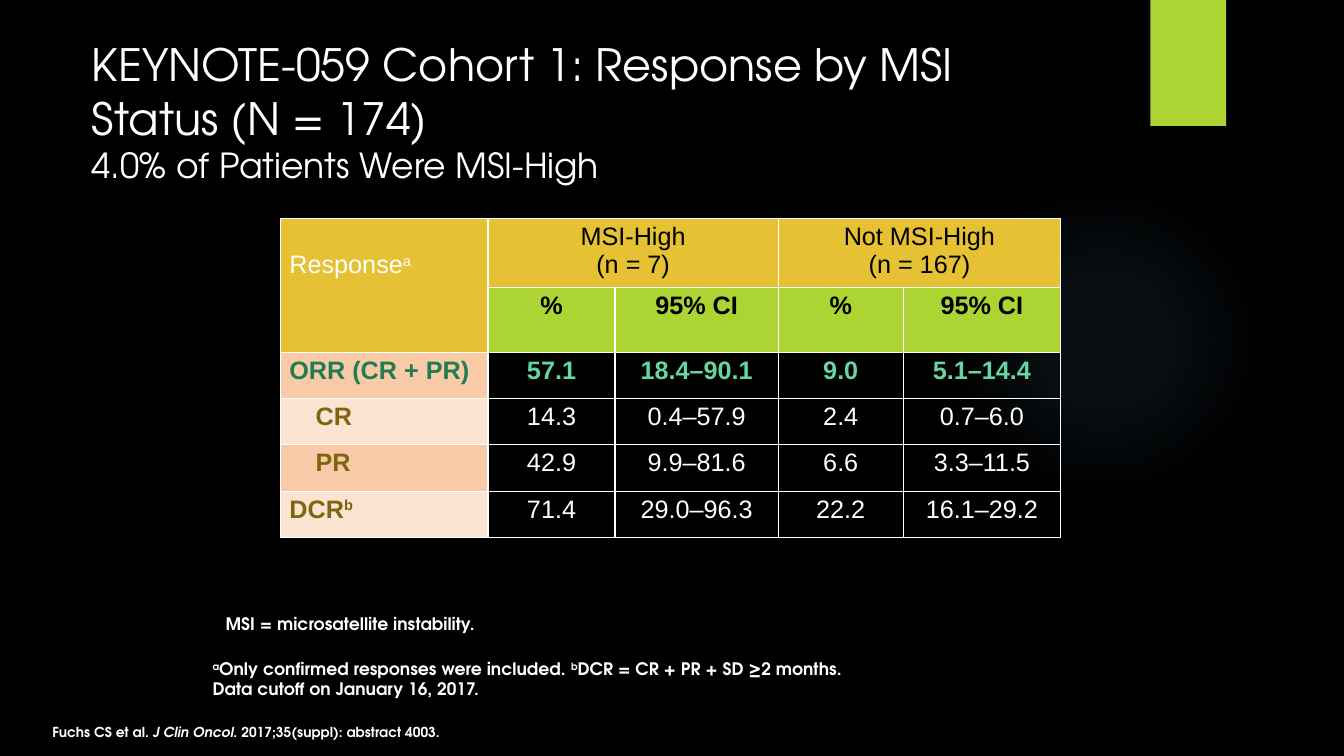
import dataclasses
import typing

import lxml.etree
import pptx
import pptx.dml.color
import pptx.enum.shapes
import pptx.enum.text
import pptx.oxml
import pptx.oxml.ns
import pptx.slide
import pptx.table
import pptx.text.text
import pptx.util

SLIDE_WIDTH = pptx.util.Inches(13.33)
SLIDE_HEIGHT = pptx.util.Inches(7.5)
DISPLAY_FONT = "TeX Gyre Adventor"
TABLE_FONT = "Arial"
WHITE, BLACK = "FFFFFF", "000000"
GOLD, LIME = "E6C133", "ACD433"
PEACH, PALE_PEACH = "F9CAA7", "FCE4D3"
GREEN, MINT, OLIVE = "217C51", "65D6A0", "7D660F"
CENTER = pptx.enum.text.PP_ALIGN.CENTER
LEFT = pptx.enum.text.PP_ALIGN.LEFT


@dataclasses.dataclass(frozen=True)
class Box:
    left: float
    top: float
    width: float
    height: float

    def place(self) -> tuple[int, int, int, int]:
        return (across(self.left), down(self.top), across(self.width), down(self.height))


@dataclasses.dataclass(frozen=True)
class Span:
    text: str
    size: float = 18
    color: str = WHITE
    bold: bool = False
    italic: bool = False
    raised: bool = False
    font: str = TABLE_FONT


@dataclasses.dataclass(frozen=True)
class ResponseRow:
    label: list[Span]
    values: tuple[str, ...]
    label_fill: str
    value_color: str = WHITE
    bold: bool = False
    indent: float = 0


def across(percent: float) -> int:
    return round(SLIDE_WIDTH * percent / 100)


def down(percent: float) -> int:
    return round(SLIDE_HEIGHT * percent / 100)


def rgb(color: str) -> pptx.dml.color.RGBColor:
    return pptx.dml.color.RGBColor.from_string(color)


def note(text: str, size: float = 12.3, italic: bool = False, raised: bool = False) -> Span:
    return Span(text, size, WHITE, True, italic, raised, DISPLAY_FONT)


def write(paragraph: pptx.text.text._Paragraph, spans: list[Span], align: typing.Any = LEFT) -> None:
    paragraph.alignment = align
    for span in spans:
        for number, line in enumerate(span.text.split("\n")):
            if number:
                paragraph.add_line_break()
            run = paragraph.add_run()
            run.text = line
            run.font.name = span.font
            run.font.size = pptx.util.Pt(span.size)
            run.font.bold = span.bold
            run.font.italic = span.italic
            run.font.color.rgb = rgb(span.color)
            if span.raised:
                run._r.get_or_add_rPr().set("baseline", "30000")


def draw_block(slide: pptx.slide.Slide, shape_type: typing.Any, box: Box, color: str) -> typing.Any:
    block = slide.shapes.add_shape(shape_type, *box.place())
    block.shadow.inherit = False
    block.fill.solid()
    block.fill.fore_color.rgb = rgb(color)
    block.line.fill.background()
    return block


def draw_glow(slide: pptx.slide.Slide, box: Box) -> None:
    glow = draw_block(slide, pptx.enum.shapes.MSO_SHAPE.OVAL, box, "7AC4F0")
    stops = "".join(
        f'<a:gs pos="{share * 1000}"><a:srgbClr val="7AC4F0"><a:alpha val="{alpha * 1000}"/></a:srgbClr></a:gs>'
        for share, alpha in ((0, 7), (36, 6), (69, 0), (100, 0))
    )
    gradient = pptx.oxml.parse_xml(
        f'<a:gradFill {pptx.oxml.ns.nsdecls("a")} rotWithShape="1"><a:gsLst>{stops}</a:gsLst>'
        '<a:path path="circle"><a:fillToRect l="50000" t="50000" r="50000" b="50000"/></a:path></a:gradFill>'
    )
    properties = glow._element.spPr
    properties.replace(properties.find(pptx.oxml.ns.qn("a:solidFill")), gradient)


def draw_note(slide: pptx.slide.Slide, box: Box, lines: list[list[Span]]) -> None:
    frame = slide.shapes.add_textbox(*box.place()).text_frame
    frame.word_wrap = True
    for number, spans in enumerate(lines):
        write(frame.add_paragraph() if number else frame.paragraphs[0], spans)


def fill_placeholder(holder: typing.Any, box: Box, spans: list[Span], anchor: typing.Any) -> None:
    holder.left, holder.top, holder.width, holder.height = box.place()
    frame = holder.text_frame
    frame.word_wrap = True
    frame.auto_size = pptx.enum.text.MSO_AUTO_SIZE.NONE
    frame.vertical_anchor = anchor
    paragraph = frame.paragraphs[0]
    properties = paragraph._p.get_or_add_pPr()
    properties.set("marL", "0")
    properties.set("indent", "0")
    lxml.etree.SubElement(properties, pptx.oxml.ns.qn("a:buNone"))
    paragraph.space_before = pptx.util.Pt(0)
    write(paragraph, spans)


def style_cell(cell: pptx.table._Cell, fill: str | None) -> None:
    properties = cell._tc.get_or_add_tcPr()
    for side in ("lnL", "lnR", "lnT", "lnB"):
        properties.append(pptx.oxml.parse_xml(
            f'<a:{side} {pptx.oxml.ns.nsdecls("a")} w="12700"><a:solidFill>'
            f'<a:srgbClr val="{WHITE}"/></a:solidFill></a:{side}>'
        ))
    if fill:
        cell.fill.solid()
        cell.fill.fore_color.rgb = rgb(fill)
    else:
        cell.fill.background()
    cell.margin_left = cell.margin_right = pptx.util.Inches(0.09)
    cell.margin_top = cell.margin_bottom = pptx.util.Inches(0.04)


def draw_table(slide: pptx.slide.Slide, box: Box, responses: list[ResponseRow]) -> None:
    widths = (15.45, 9.45, 12.15, 9.3, 11.71)
    heights = (9.07, 8.6) + (6.13,) * len(responses)
    table = slide.shapes.add_table(len(heights), len(widths), *box.place()).table
    table.first_row = table.horz_banding = False
    for column, width in zip(table.columns, widths):
        column.width = across(width)
    for row, height in zip(table.rows, heights):
        row.height = down(height)

    fills = [[GOLD] * 5, [GOLD] + [LIME] * 4] + [[response.label_fill] + [None] * 4 for response in responses]
    for row, row_fills in enumerate(fills):
        for column, fill in enumerate(row_fills):
            style_cell(table.cell(row, column), fill)

    corner = table.cell(0, 0)
    corner.merge(table.cell(1, 0))
    corner.margin_top = pptx.util.Inches(0.32)
    write(corner.text_frame.paragraphs[0], [Span("Response"), Span("a", raised=True)])
    for column, group in ((1, "MSI-High\n(n = 7)"), (3, "Not MSI-High\n(n = 167)")):
        heading = table.cell(0, column)
        heading.merge(table.cell(0, column + 1))
        write(heading.text_frame.paragraphs[0], [Span(group, color=BLACK)], CENTER)
        for offset, measure in enumerate(("%", "95% CI")):
            cell = table.cell(1, column + offset)
            write(cell.text_frame.paragraphs[0], [Span(measure, color=BLACK, bold=True)], CENTER)

    for row, response in enumerate(responses, 2):
        label = table.cell(row, 0).text_frame.paragraphs[0]
        label._p.get_or_add_pPr().set("marL", str(pptx.util.Inches(response.indent)))
        write(label, response.label)
        for column, value in enumerate(response.values, 1):
            spans = [Span(value, color=response.value_color, bold=response.bold)]
            write(table.cell(row, column).text_frame.paragraphs[0], spans, CENTER)


def main() -> None:
    deck = pptx.Presentation()
    deck.slide_width, deck.slide_height = SLIDE_WIDTH, SLIDE_HEIGHT
    slide = deck.slides.add_slide(deck.slide_layouts[1])
    slide.background.fill.solid()
    slide.background.fill.fore_color.rgb = rgb(BLACK)

    draw_glow(slide, Box(70.59, 24.4, 23.11, 41.07))
    draw_block(slide, pptx.enum.shapes.MSO_SHAPE.RECTANGLE, Box(85.6, 0, 5.63, 16.67), LIME)
    fill_placeholder(slide.shapes.title, Box(6.08, 4.27, 75.32, 16.4), [
        Span("KEYNOTE-059 Cohort 1: Response by MSI Status (N = 174)\n", 31.8, font=DISPLAY_FONT),
        Span("4.0% of Patients Were MSI-High", 24.7, font=DISPLAY_FONT),
    ], pptx.enum.text.MSO_ANCHOR.TOP)
    fill_placeholder(slide.placeholders[1], Box(3.15, 95.2, 93.92, 3.33), [
        note("Fuchs CS et al. ", 9.8), note("J Clin Oncol.", 9.8, italic=True),
        note(" 2017;35(suppl): abstract 4003.", 9.8),
    ], pptx.enum.text.MSO_ANCHOR.BOTTOM)
    draw_table(slide, Box(20.86, 28.93, 58.06, 42.19), [
        ResponseRow([Span("ORR (CR + PR)", color=GREEN, bold=True)],
                    ("57.1", "18.4–90.1", "9.0", "5.1–14.4"), PEACH, MINT, True),
        ResponseRow([Span("CR", color=OLIVE, bold=True)],
                    ("14.3", "0.4–57.9", "2.4", "0.7–6.0"), PALE_PEACH, indent=0.26),
        ResponseRow([Span("PR", color=OLIVE, bold=True)],
                    ("42.9", "9.9–81.6", "6.6", "3.3–11.5"), PEACH, indent=0.26),
        ResponseRow([Span("DCR", color=OLIVE, bold=True), Span("b", color=OLIVE, bold=True, raised=True)],
                    ("71.4", "29.0–96.3", "22.2", "16.1–29.2"), PALE_PEACH),
    ])
    draw_note(slide, Box(15.08, 86.4, 67.07, 6.93), [
        [note("a", raised=True), note("Only confirmed responses were included. "),
         note("b", raised=True), note("DCR = CR + PR + SD ≥2 months.")],
        [note("Data cutoff on January 16, 2017.")],
    ])
    draw_note(slide, Box(16.05, 80.53, 22.36, 4.13), [[note("MSI = microsatellite instability.")]])
    deck.save("out.pptx")


if __name__ == "__main__":
    main()
